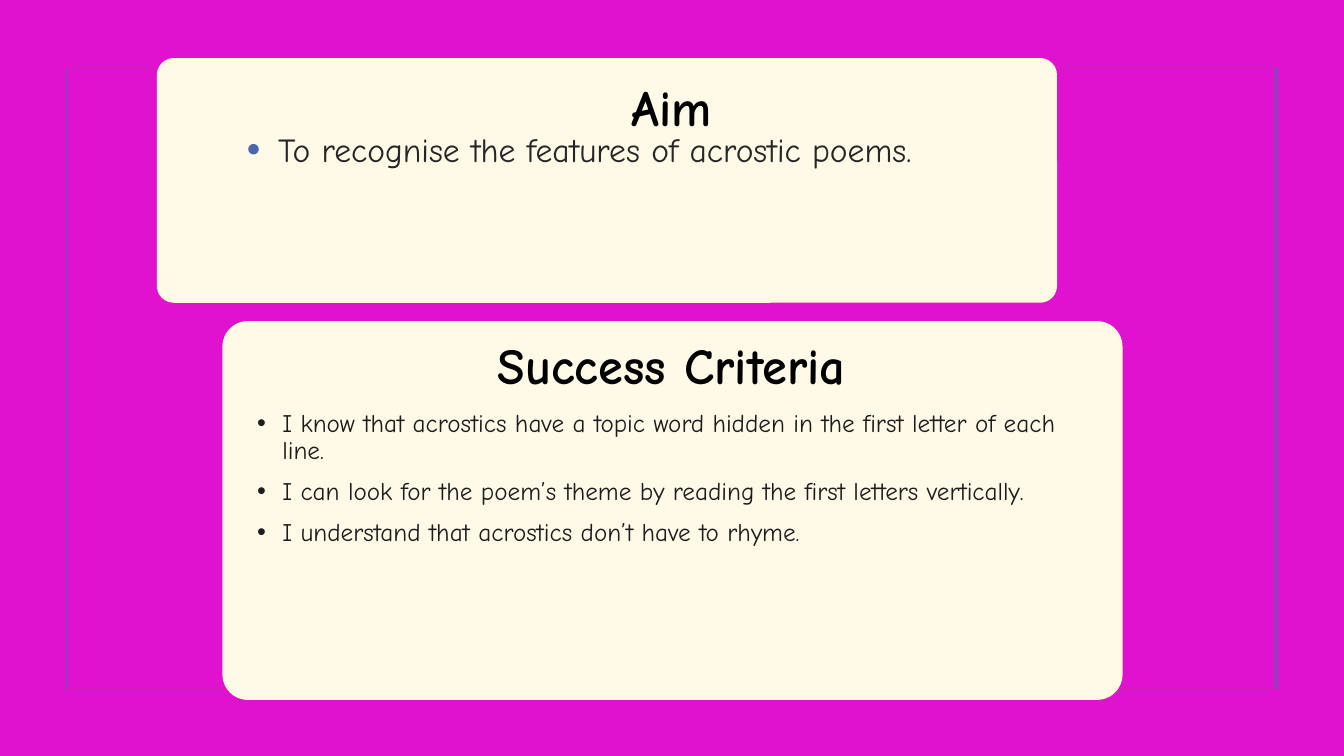
from lxml import etree
from pptx import Presentation
from pptx.dml.color import RGBColor
from pptx.enum.shapes import MSO_SHAPE
from pptx.enum.text import MSO_ANCHOR, MSO_AUTO_SIZE, PP_ALIGN
from pptx.oxml.ns import qn
from pptx.util import Inches, Pt

RECTANGLE = MSO_SHAPE.RECTANGLE
ROUNDED = MSO_SHAPE.ROUNDED_RECTANGLE
TOP, MIDDLE = MSO_ANCHOR.TOP, MSO_ANCHOR.MIDDLE
LEFT, CENTER = PP_ALIGN.LEFT, PP_ALIGN.CENTER
NO_AUTOFIT = MSO_AUTO_SIZE.NONE

FONT = "Comic Neue"
COLORS = {
    "background": "DE12CF",
    "frame": "4A66AC",
    "card": "FFF9E7",
    "card_edge": "FEFBDA",
    "heading": "000000",
    "aim": "262626",
    "criteria": "1C1C1C",
}
TEXT_LEFT, TEXT_WIDTH = 2.35, 8.62
CRITERIA = [
    "I know that acrostics have a topic word hidden in the first letter of each line.",
    "I can look for the poem’s theme by reading the first letters vertically.",
    "I understand that acrostics don’t have to rhyme.",
]


def color(name):
    return RGBColor.from_string(COLORS[name])


def add_panel(slide, preset, box, line, width, fill=None):
    shape = slide.shapes.add_shape(preset, *map(Inches, box))
    shape.shadow.inherit = False
    if fill:
        shape.fill.solid()
        shape.fill.fore_color.rgb = color(fill)
    else:
        shape.fill.background()
    shape.line.color.rgb = color(line)
    shape.line.width = Pt(width)
    return shape


def add_card(slide, left, top, height):
    card = add_panel(slide, ROUNDED, (left, top, 8.9, height), "card_edge", 2, "card")
    card.adjustments[0] = 0.064


def add_text_area(slide, top, height):
    return slide.shapes.add_textbox(*map(Inches, (TEXT_LEFT, top, TEXT_WIDTH, height)))


def set_frame(shape, margins, anchor):
    frame = shape.text_frame
    frame.word_wrap = True
    frame.auto_size = NO_AUTOFIT
    frame.vertical_anchor = anchor
    (frame.margin_left, frame.margin_top,
     frame.margin_right, frame.margin_bottom) = map(Inches, margins)
    return frame


def add_run(paragraph, text, size, color_name, bold=False):
    run = paragraph.add_run()
    run.text = text
    run.font.name = FONT
    run.font.size = Pt(size)
    run.font.bold = bold
    run.font.color.rgb = color(color_name)


def write_heading(shape, text):
    paragraph = set_frame(shape, (0, 0, 0, 0), MIDDLE).paragraphs[0]
    paragraph.alignment = CENTER
    paragraph.line_spacing = 0.9
    add_run(paragraph, text, 36, "heading", bold=True)


def set_bullet(paragraph, indent, bullet_color=None, percent=None):
    properties = paragraph._p.get_or_add_pPr()
    properties.set("marL", str(Inches(indent)))
    properties.set("indent", str(-Inches(indent)))
    if bullet_color:
        holder = etree.SubElement(properties, qn("a:buClr"))
        etree.SubElement(holder, qn("a:srgbClr"), val=COLORS[bullet_color])
    if percent:
        etree.SubElement(properties, qn("a:buSzPct"), val=str(percent * 1000))
    etree.SubElement(properties, qn("a:buFont"), typeface="Arial")
    etree.SubElement(properties, qn("a:buChar"), char="•")


def write_aim(shape, text):
    paragraph = set_frame(shape, (0.1, 0.05, 0.1, 0.05), TOP).paragraphs[0]
    paragraph.alignment = LEFT
    paragraph.space_after = Pt(6)
    set_bullet(paragraph, 0.31, "frame", 115)
    add_run(paragraph, text, 24, "aim")


def write_criteria(shape, criteria):
    frame = set_frame(shape, (0.2, 0.28, 0.28, 0.2), TOP)
    for index, text in enumerate(criteria):
        paragraph = frame.add_paragraph() if index else frame.paragraphs[0]
        paragraph.alignment = LEFT
        paragraph.line_spacing = 0.9
        if index:
            paragraph.space_before = Pt(10)
        set_bullet(paragraph, 0.25)
        add_run(paragraph, text, 18, "criteria")


def main():
    presentation = Presentation()
    presentation.slide_width = Inches(13.33)
    presentation.slide_height = Inches(7.5)
    slide = presentation.slides.add_slide(presentation.slide_layouts.get_by_name("Title Only"))
    slide.background.fill.solid()
    slide.background.fill.fore_color.rgb = color("background")

    # Frame and cards
    add_panel(slide, RECTANGLE, (0.66, 0.67, 12, 6.17), "frame", 1.25)
    add_card(slide, 2.22, 3.2, 3.73)
    add_card(slide, 1.57, 0.59, 2.4)

    # Aim: the title is brought in front of the cards
    title = slide.shapes.title
    title.left, title.top, title.width, title.height = map(
        Inches, (TEXT_LEFT, 0.8, TEXT_WIDTH, 0.59))
    slide.shapes._spTree.append(title._element)
    write_heading(title, "Aim")
    write_aim(add_text_area(slide, 1.23, 1.54), "To recognise the features of acrostic poems.")

    # Success criteria
    write_heading(add_text_area(slide, 3.36, 0.59), "Success Criteria")
    write_criteria(add_text_area(slide, 3.79, 2.87), CRITERIA)

    presentation.save("out.pptx")


if __name__ == "__main__":
    main()
